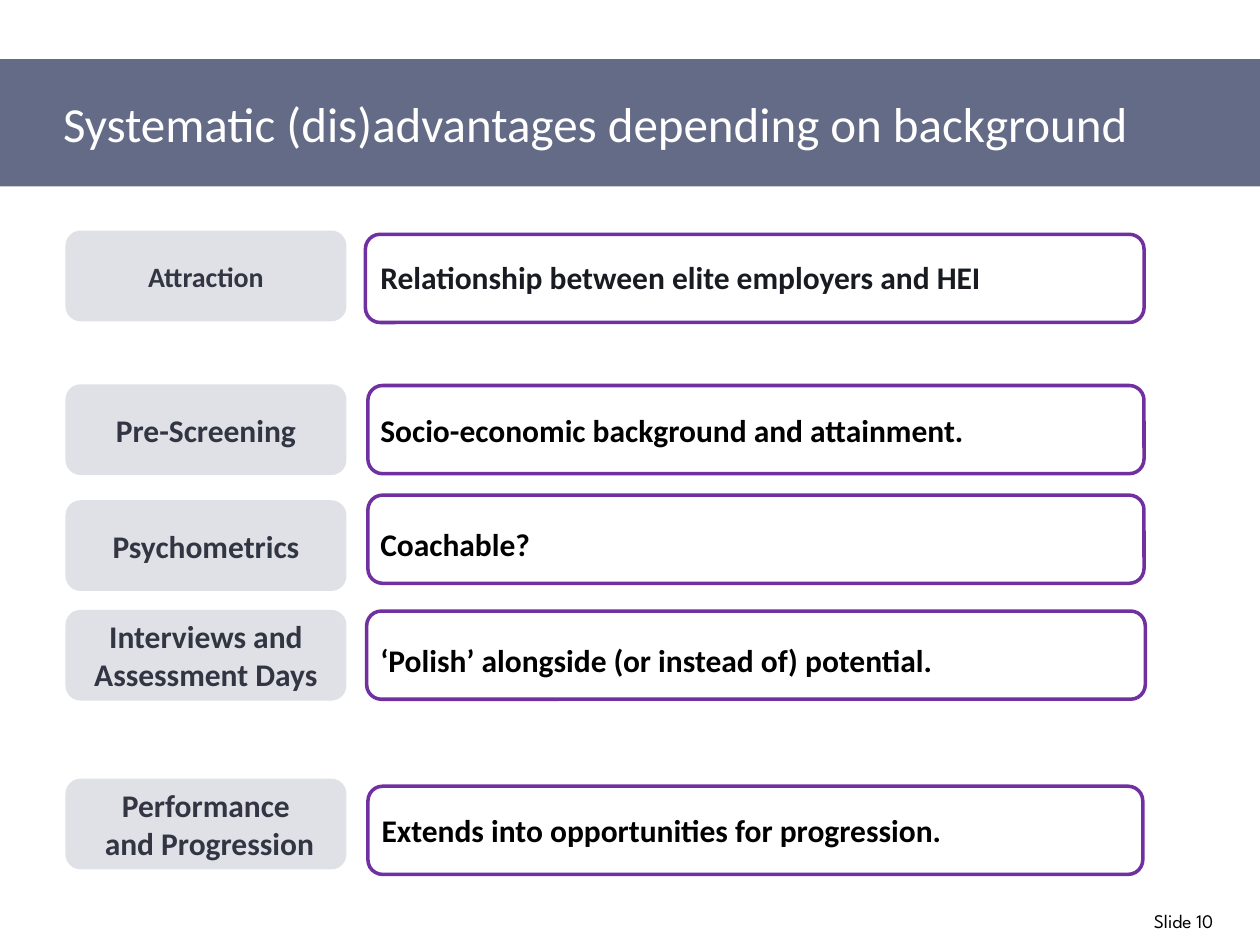
from dataclasses import dataclass
from typing import Any

from pptx import Presentation
from pptx.dml.color import RGBColor
from pptx.enum.shapes import MSO_SHAPE
from pptx.enum.text import MSO_ANCHOR, MSO_AUTO_SIZE, PP_ALIGN
from pptx.util import Pt

EMU_PER_PX = 9144
BAND, WHITE, BLACK = "646B86", "FFFFFF", "000000"
LABEL_FILL, LABEL_TEXT = "DFE1E7", "323643"
OUTLINE, DARK = "7030A0", "191B22"

STAGES = [
    (["Attraction"], 16, 183, (290, 186, 618), (292, 200, 594),
     "Relationship between elite employers and HEI", DARK),
    (["Pre-Screening"], 18, 305, (292, 306, 616), (292, 321, 639),
     "Socio-economic background and attainment.", BLACK),
    (["Psychometrics"], 18, 397, (292, 393, 616), (292, 412, 594),
     "Coachable?", BLACK),
    (["Interviews and Assessment Days"], 18, 484, (291, 485, 618), (292, 504, 594),
     "‘Polish’ alongside (or instead of) potential.", BLACK),
    (["Performance", " and Progression"], 18, 618, (292, 624, 615), (293, 639, 594),
     "Extends into opportunities for progression.", BLACK),
]


def px(*lengths):
    return [length * EMU_PER_PX for length in lengths]


def rgb(code):
    return RGBColor.from_string(code)


@dataclass
class StageSlide:
    """Draws styled elements on the current slide."""

    slide: Any
    font: str = "Calibri"

    def add_lines(self, frame, lines, size, color, bold=False, align=PP_ALIGN.LEFT, font=None):
        frame.word_wrap = True
        for index, line in enumerate(lines):
            paragraph = frame.paragraphs[0] if index == 0 else frame.add_paragraph()
            paragraph.alignment = align
            run = paragraph.add_run()
            run.text = line
            run.font.name = font or self.font
            run.font.size = Pt(size)
            run.font.bold = bold
            run.font.color.rgb = rgb(color)

    def panel(self, place, kind=MSO_SHAPE.ROUNDED_RECTANGLE, fill=None, outline=None):
        panel = self.slide.shapes.add_shape(kind, *px(*place))
        panel.shadow.inherit = False
        if fill:
            panel.fill.solid()
            panel.fill.fore_color.rgb = rgb(fill)
        else:
            panel.fill.background()
        if outline:
            panel.line.color.rgb = rgb(outline)
            panel.line.width = Pt(2)
        else:
            panel.line.fill.background()
        panel.text_frame.vertical_anchor = MSO_ANCHOR.MIDDLE
        return panel

    def heading(self, text):
        title = self.slide.shapes.title
        band = self.panel((0, 47, 1000, 101), MSO_SHAPE.RECTANGLE, BAND)
        title._element.addprevious(band._element)
        title.left, title.top, title.width, title.height = px(50, 47, 900, 101)
        frame = title.text_frame
        frame.margin_left = frame.margin_right = frame.margin_top = frame.margin_bottom = 0
        frame.vertical_anchor = MSO_ANCHOR.MIDDLE
        frame.auto_size = MSO_AUTO_SIZE.NONE
        self.add_lines(frame, [text], 28, WHITE)

    def page_number(self, text):
        footer = self.panel((797, 715, 176, 31), MSO_SHAPE.RECTANGLE, WHITE)
        self.add_lines(footer.text_frame, [text], 11, BLACK,
                       align=PP_ALIGN.RIGHT, font="League Spartan")

    def label(self, lines, size, top):
        label = self.panel((52, top, 223, 72), fill=LABEL_FILL)
        self.add_lines(label.text_frame, lines, size, LABEL_TEXT, True, PP_ALIGN.CENTER)

    def finding(self, frame_place, text_place, text, color):
        left, top, width = frame_place
        self.panel((left, top, width, 70), outline=OUTLINE)
        left, top, width = text_place
        note = self.slide.shapes.add_textbox(*px(left, top, width, 40))
        self.add_lines(note.text_frame, [text], 18, color, True)
        note.text_frame.auto_size = MSO_AUTO_SIZE.SHAPE_TO_FIT_TEXT


def main():
    deck = Presentation()
    deck.slide_width, deck.slide_height = px(1000, 750)
    page = StageSlide(deck.slides.add_slide(deck.slide_layouts[5]))
    page.heading("Systematic (dis)advantages depending on background")
    page.page_number("Slide 10")
    for lines, size, top, frame_place, text_place, text, color in STAGES:
        page.label(lines, size, top)
        page.finding(frame_place, text_place, text, color)
    deck.save("out.pptx")


if __name__ == "__main__":
    main()
